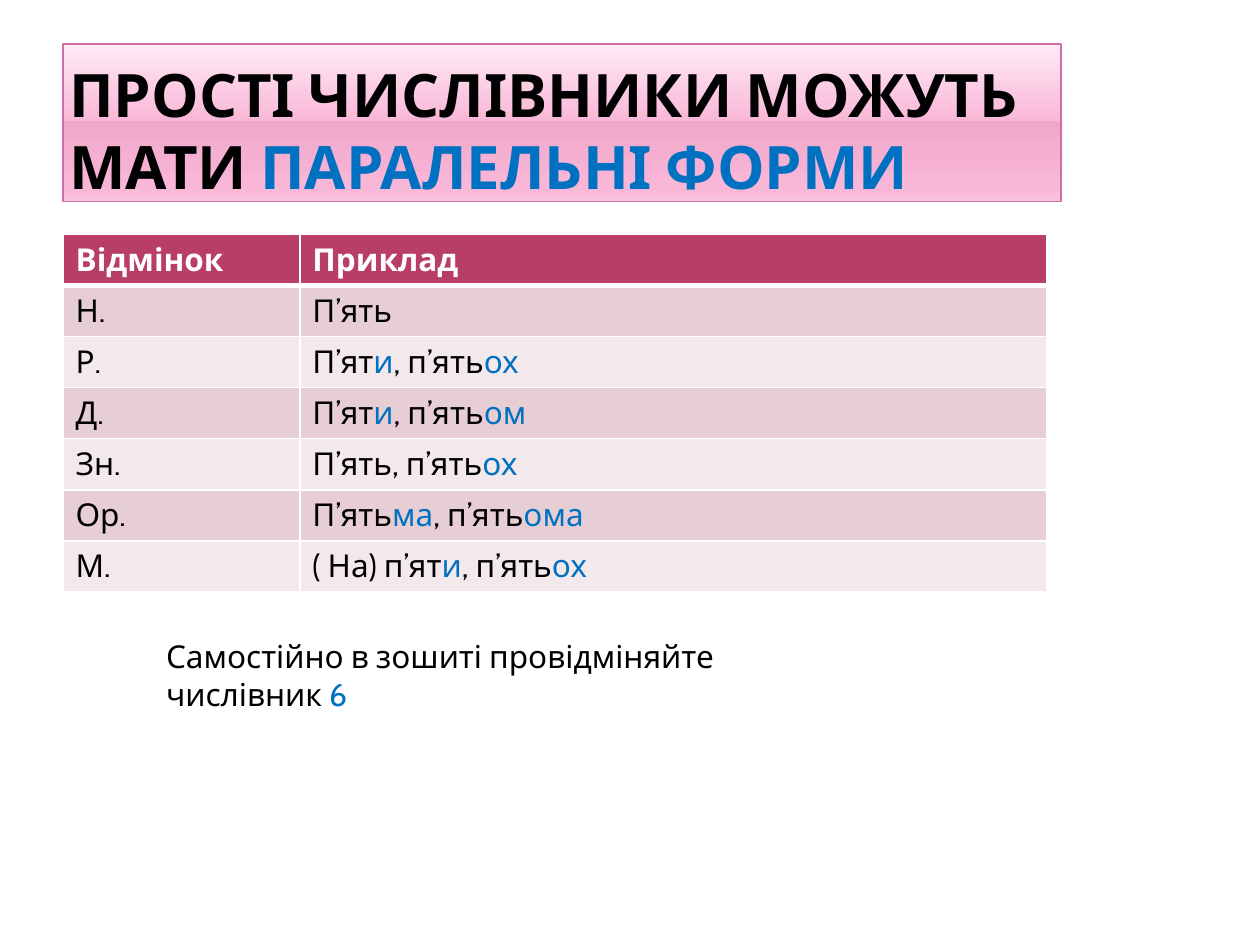
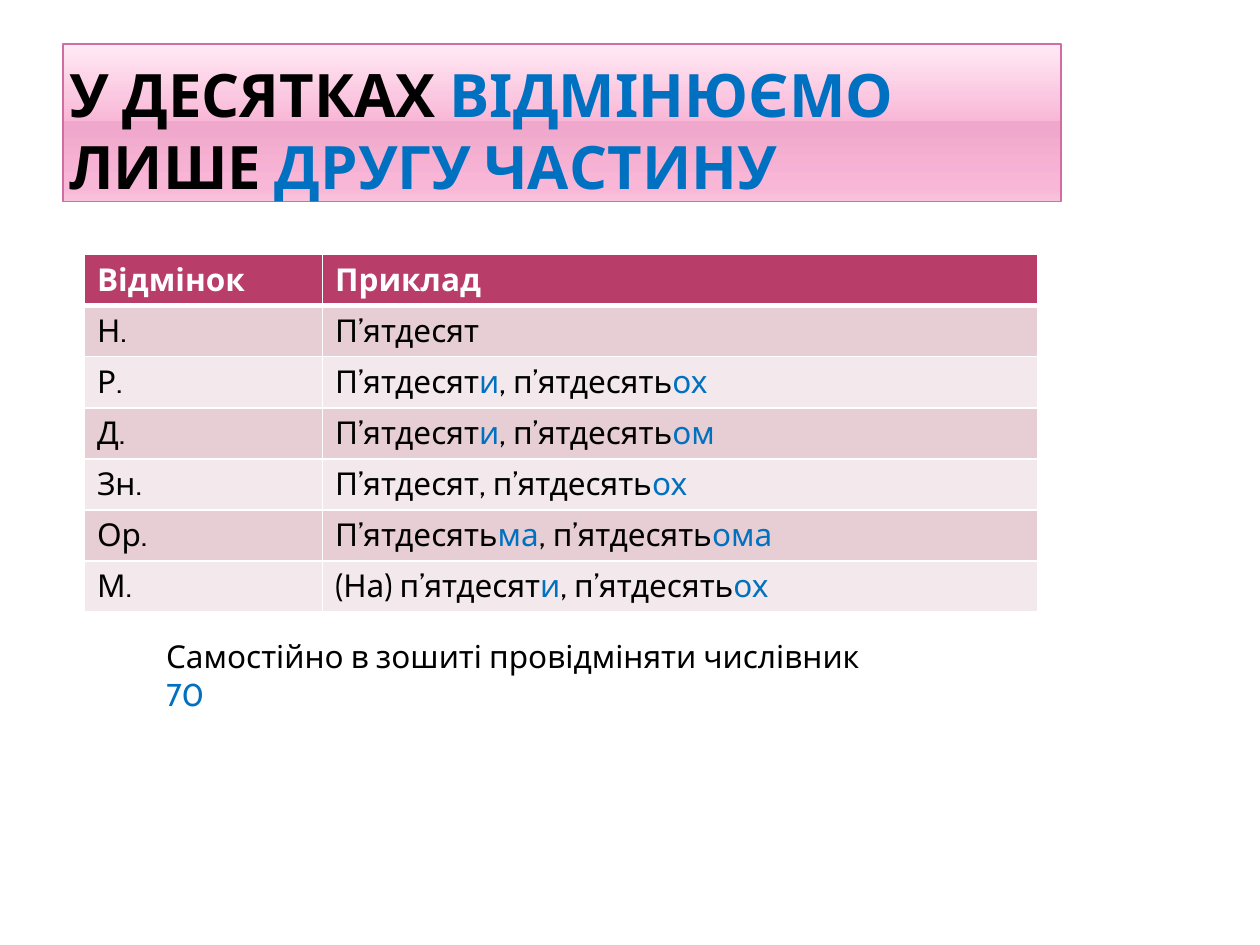
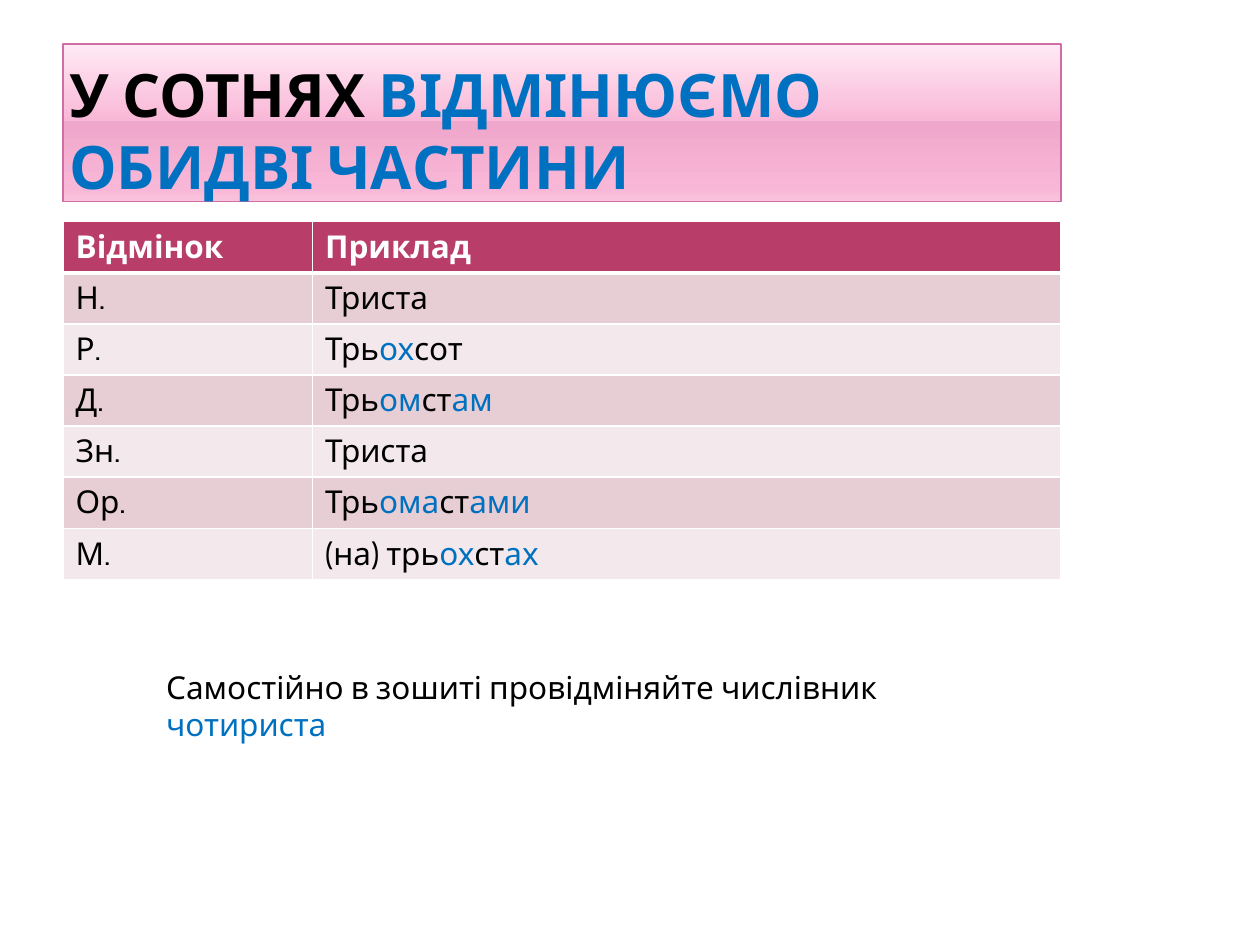
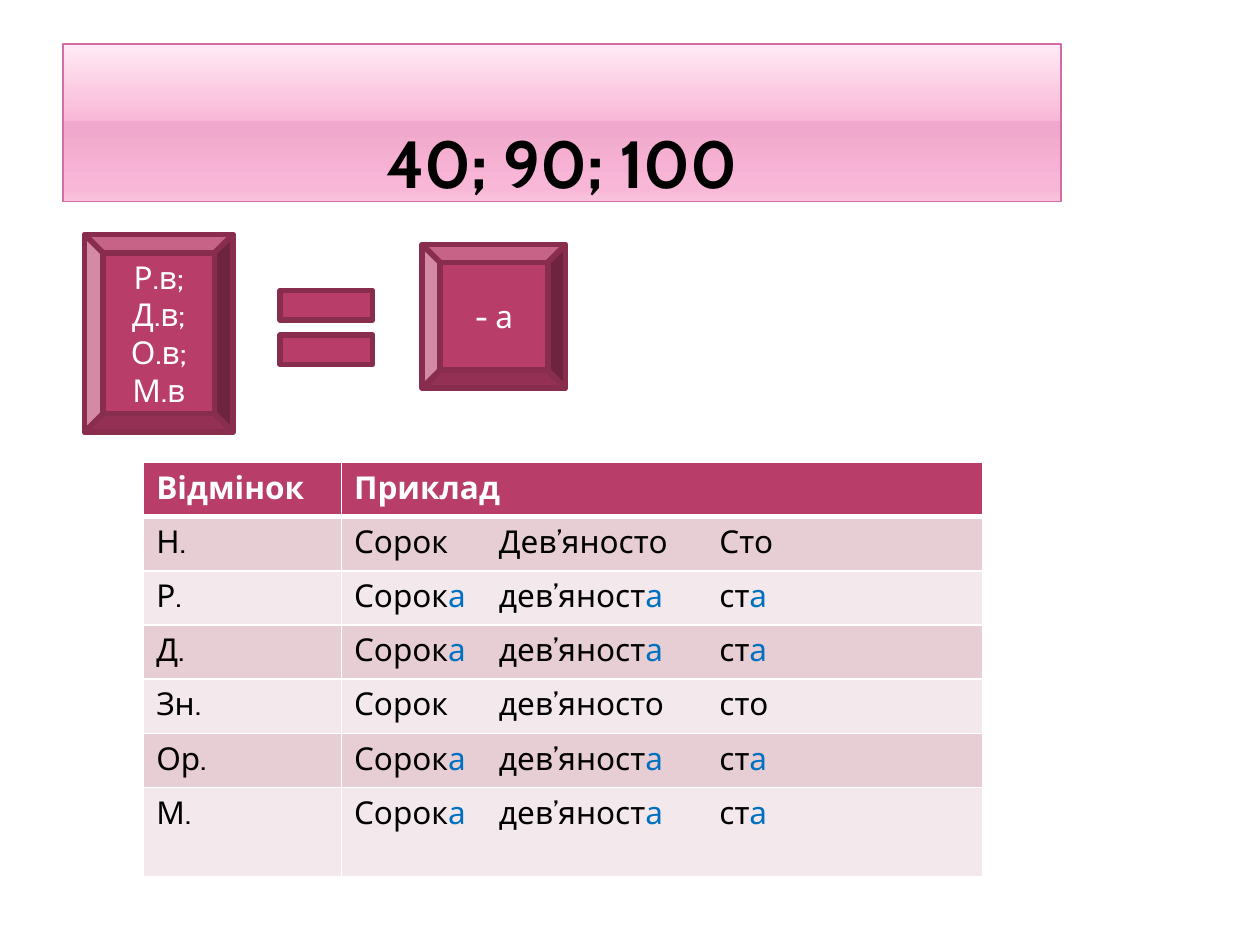
from copy import deepcopy

from lxml.etree import SubElement
from pptx import Presentation
from pptx.dml.color import RGBColor
from pptx.enum.shapes import MSO_SHAPE
from pptx.enum.text import MSO_ANCHOR, MSO_AUTO_SIZE, PP_ALIGN
from pptx.oxml.ns import qn
from pptx.util import Inches, Pt

BLACK, WHITE, BLUE = "000000", "FFFFFF", "0070C0"
BERRY, DARK_BERRY, TITLE_LINE = "B83D68", "882D4D", "CF6DA4"
BANDS = ["E6CED4", "F3E8EB"]
TITLE_STOPS = [(0, "FFEAF4"), (0.49, "F9B7D7"), (0.49, "EFA7CB"),
               (0.92, "F9B7D7"), (1, "F8C4DD")]
CASES = ["Н.", "Р.", "Д.", "Зн.", "Ор.", "М."]
ROW_HEIGHT = 0.4


def color(value):
    return RGBColor.from_string(value)


def apply(target, values):
    for name, value in values.items():
        setattr(target, name, value)


def lengths(*values):
    return [Inches(value) for value in values]


class Deck:
    font = "Cabin"

    def __init__(self):
        self.deck = Presentation()
        apply(self.deck, {"slide_width": Inches(10), "slide_height": Inches(7.5)})
        self.page = None

    def add_text(self, para, text, size=18, base=BLACK, bold=False, align=PP_ALIGN.LEFT):
        """Text between bars is set in blue."""
        para.alignment = align
        for index, part in enumerate(text.split("|")):
            if part:
                span = para.add_run()
                span.text = part
                apply(span.font, {"name": self.font, "size": Pt(size), "bold": bold})
                span.font.color.rgb = color(BLUE if index % 2 else base)

    def outline(self, box, line, width):
        box.shadow.inherit = False
        box.line.color.rgb = color(line)
        box.line.width = Pt(width)

    def title(self, text, size=34.2, align=PP_ALIGN.LEFT):
        self.page = self.deck.slides.add_slide(self.deck.slide_layouts[5])
        box = self.page.shapes.title
        left, top, width, height = lengths(0.5, 0.35, 7.92, 1.25)
        apply(box, {"left": left, "top": top, "width": width, "height": height})
        box.fill.gradient()
        box.fill.gradient_angle = 270
        stops = box.element.spPr.find(".//" + qn("a:gsLst"))
        while len(stops) < len(TITLE_STOPS):
            stops.append(deepcopy(stops[0]))
        for stop, (position, value) in zip(box.fill.gradient_stops, TITLE_STOPS):
            stop.position = position
            stop.color.rgb = color(value)
        self.outline(box, TITLE_LINE, 0.9)
        frame = box.text_frame
        apply(frame, {"margin_left": Inches(0.05), "margin_right": Inches(0.05),
                      "margin_top": 0, "margin_bottom": 0, "word_wrap": True,
                      "auto_size": MSO_AUTO_SIZE.NONE,
                      "vertical_anchor": MSO_ANCHOR.BOTTOM})
        self.add_text(frame.paragraphs[0], text, size, bold=True, align=align)

    def borders(self, cell, top, bottom):
        properties = cell._tc.get_or_add_tcPr()
        for side, width in (("L", 1), ("R", 1), ("T", top), ("B", bottom)):
            line = SubElement(properties, qn("a:ln" + side), w=str(Pt(width)))
            fill = SubElement(line, qn("a:solidFill"))
            SubElement(fill, qn("a:srgbClr"), val=WHITE)

    def tabs(self, para, stops):
        tab_list = SubElement(para._p.get_or_add_pPr(), qn("a:tabLst"))
        for stop in stops:
            SubElement(tab_list, qn("a:tab"), pos=str(Inches(stop)), algn="l")

    def table(self, left, top, columns, examples, row_height=ROW_HEIGHT,
              last_height=None, stops=()):
        rows = [("Відмінок", "Приклад"), *zip(CASES, examples)]
        heights = [row_height] * (len(rows) - 1) + [last_height or row_height]
        place = lengths(left, top, sum(columns), sum(heights))
        table = self.page.shapes.add_table(len(rows), len(columns), *place).table
        for column, width in zip(table.columns, columns):
            column.width = Inches(width)
        for index, texts in enumerate(rows):
            header = index == 0
            table.rows[index].height = Inches(heights[index])
            for cell, text in zip(table.rows[index].cells, texts):
                self.borders(cell, 3 if index == 1 else 1, 3 if header else 1)
                cell.fill.solid()
                cell.fill.fore_color.rgb = color(BERRY if header else BANDS[(index - 1) % 2])
                para = cell.text_frame.paragraphs[0]
                if "\t" in text:
                    self.tabs(para, stops)
                self.add_text(para, text, base=WHITE if header else BLACK, bold=header)

    def task(self, top, width, text):
        box = self.page.shapes.add_textbox(*lengths(1.22, top, width, 0.4))
        apply(box.text_frame, {"word_wrap": True,
                               "auto_size": MSO_AUTO_SIZE.SHAPE_TO_FIT_TEXT})
        self.add_text(box.text_frame.paragraphs[0], text)

    def shape(self, kind, left, top, width, height, lines=()):
        box = self.page.shapes.add_shape(kind, *lengths(left, top, width, height))
        box.fill.solid()
        box.fill.fore_color.rgb = color(BERRY)
        self.outline(box, DARK_BERRY, 3.15)
        frame = box.text_frame
        frame.vertical_anchor = MSO_ANCHOR.MIDDLE
        for index, text in enumerate(lines):
            para = frame.add_paragraph() if index else frame.paragraphs[0]
            self.add_text(para, text, base=WHITE, align=PP_ALIGN.CENTER)


def main():
    deck = Deck()

    deck.title("ПРОСТІ ЧИСЛІВНИКИ МОЖУТЬ МАТИ |ПАРАЛЕЛЬНІ ФОРМИ")
    deck.table(0.5, 1.86, [1.88, 5.93], [
        "П’ять", "П’ят|и|, п’ять|ох", "П’ят|и|, п’ять|ом", "П’ять, п’ять|ох",
        "П’ять|ма|, п’ять|ома", "( На) п’ят|и|, п’ять|ох"])
    deck.task(5.01, 5.8, "Самостійно в зошиті провідміняйте числівник |6")

    deck.title("У ДЕСЯТКАХ |ВІДМІНЮЄМО| ЛИШЕ |ДРУГУ ЧАСТИНУ")
    deck.table(0.67, 2.02, [1.89, 5.68], [
        "П’ятдесят", "П’ятдесят|и|, п’ятдесять|ох", "П’ятдесят|и|, п’ятдесять|ом",
        "П’ятдесят, п’ятдесять|ох", "П’ятдесять|ма|, п’ятдесять|ома",
        "(На) п’ятдесят|и|, п’ятдесять|ох"])
    deck.task(5.01, 5.76, "Самостійно в зошиті провідміняти числівник |70")

    deck.title("У СОТНЯХ |ВІДМІНЮЄМО ОБИДВІ ЧАСТИНИ")
    deck.table(0.5, 1.76, [1.98, 5.94], [
        "Триста", "Трь|ох|сот", "Трь|ом|ст|ам", "Триста",
        "Трь|ома|ст|ами", "(на) трь|ох|ст|ах"])
    deck.task(5.25, 6.81, "Самостійно в зошиті провідміняйте числівник |чотириста")

    deck.title("40; 90; 100", size=38, align=PP_ALIGN.CENTER)
    deck.shape(MSO_SHAPE.BEVEL, 0.67, 1.86, 1.18, 1.57, ["Р.в;", "Д.в;", "О.в;", "М.в"])
    deck.shape(MSO_SHAPE.BEVEL, 3.35, 1.94, 1.14, 1.14, ["- а"])
    deck.shape(MSO_SHAPE.MATH_EQUAL, 2.09, 2.1, 1, 1)
    oblique = "Сорок|а|\tдев’яност|а|\tст|а"
    deck.table(1.14, 3.67, [1.57, 5.09], [
        "Сорок\tДев’яносто\tСто", oblique, oblique,
        "Сорок\tдев’яносто\tсто", oblique, oblique],
        row_height=0.43, last_height=0.71, stops=[1.15, 2.9])

    deck.deck.save("out.pptx")


if __name__ == "__main__":
    main()
